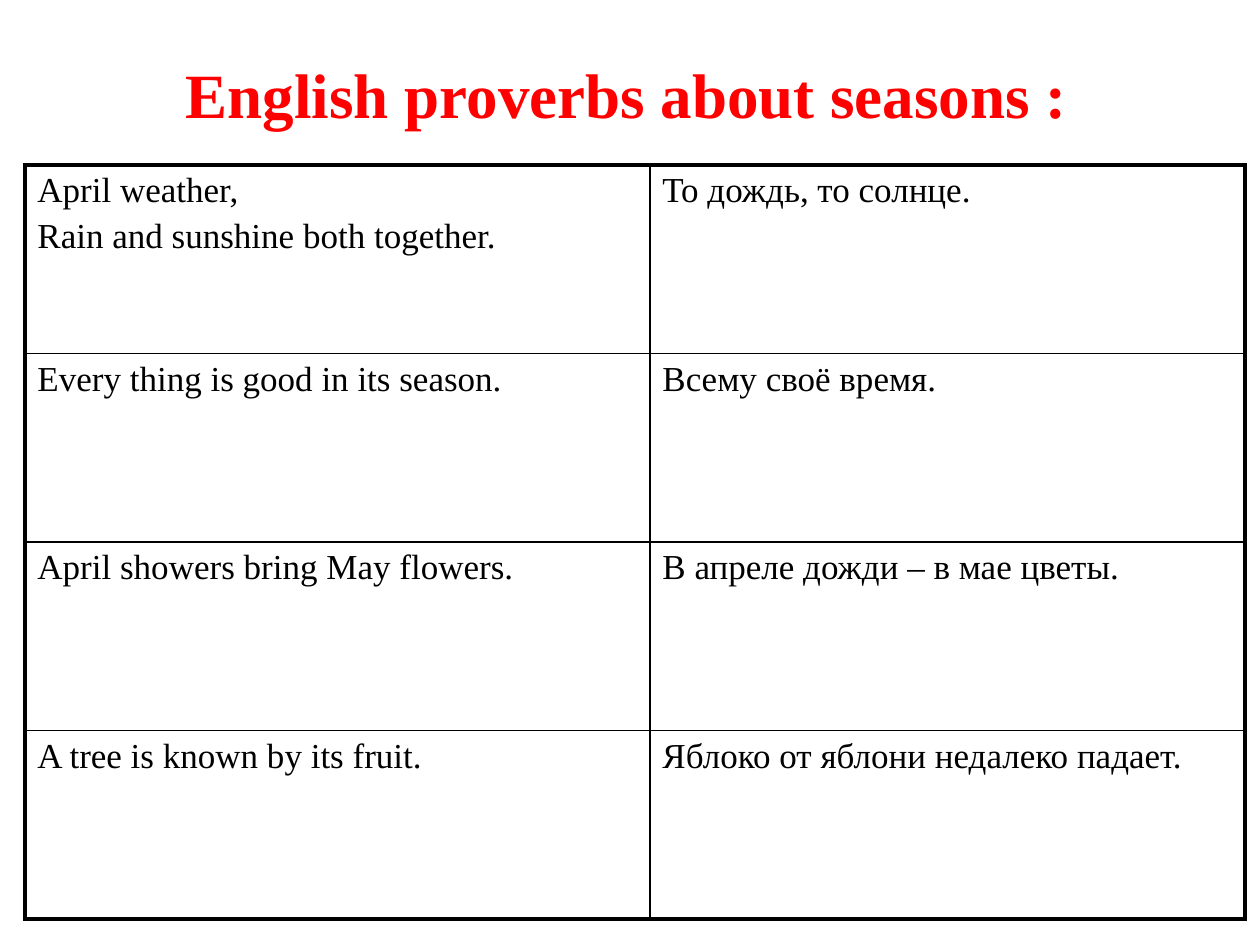
from lxml import etree
from pptx import Presentation
from pptx import util as u
from pptx.dml import color
from pptx.enum import text
from pptx.oxml import ns

THEME = {
    "ink": color.RGBColor(0, 0, 0),
    "accent": color.RGBColor(255, 0, 0),
    "font": "Times New Roman",
    "title": u.Pt(36),
    "body": u.Pt(20),
    "frame": u.Pt(2.25),
    "grid": u.Pt(1),
}
PROVERBS = [
    ("April weather,\nRain and sunshine both together.", "То дождь, то солнце."),
    ("Every thing is good in its season.", "Всему своё время."),
    ("April showers bring May flowers.", "В апреле дожди – в мае цветы."),
    ("A tree is known by its fruit.", "Яблоко от яблони недалеко падает."),
]
COLUMN_WIDTHS = [u.Cm(12.6), u.Cm(12)]
ROW_HEIGHT = u.Cm(3.8)


def write(paragraph, words, size, ink, bold=False):
    run = paragraph.add_run()
    run.text = words
    for name, value in {"name": THEME["font"], "size": size, "bold": bold}.items():
        setattr(run.font, name, value)
    run.font.color.rgb = ink


def rule_edge(cell, side, width):
    edge = etree.SubElement(cell._tc.get_or_add_tcPr(), ns.qn(f"a:ln{side}"), w=str(int(width)))
    fill = etree.SubElement(edge, ns.qn("a:solidFill"))
    etree.SubElement(fill, ns.qn("a:srgbClr"), val=str(THEME["ink"]))


deck = Presentation()
deck.slide_width, deck.slide_height = u.Cm(25.4), u.Cm(19.05)
slide = deck.slides.add_slide(deck.slide_layouts[6])

heading = slide.shapes.add_textbox(u.Cm(1.2), u.Cm(1), u.Cm(22.86), u.Cm(1.75)).text_frame
for name, value in {"word_wrap": True, "vertical_anchor": text.MSO_ANCHOR.MIDDLE}.items():
    setattr(heading, name, value)
heading.paragraphs[0].alignment = text.PP_ALIGN.CENTER
write(heading.paragraphs[0], "English proverbs about seasons :", THEME["title"], THEME["accent"], True)

proverbs = slide.shapes.add_table(
    len(PROVERBS), len(COLUMN_WIDTHS), u.Cm(0.5), u.Cm(3.33),
    sum(COLUMN_WIDTHS), ROW_HEIGHT * len(PROVERBS),
).table
proverbs.first_row = proverbs.horz_banding = False
for column, width in zip(proverbs.columns, COLUMN_WIDTHS):
    column.width = width

last_row, last_column = len(PROVERBS) - 1, len(COLUMN_WIDTHS) - 1
for r, pair in enumerate(PROVERBS):
    proverbs.rows[r].height = ROW_HEIGHT
    for c, saying in enumerate(pair):
        cell = proverbs.cell(r, c)
        outer = {"L": c == 0, "R": c == last_column, "T": r == 0, "B": r == last_row}
        for side, is_outer in outer.items():
            rule_edge(cell, side, THEME["frame" if is_outer else "grid"])
        cell.fill.background()
        for i, line in enumerate(saying.split("\n")):
            frame = cell.text_frame
            paragraph = frame.add_paragraph() if i else frame.paragraphs[0]
            paragraph.space_before = u.Pt(4)
            write(paragraph, line, THEME["body"], THEME["ink"])

deck.save("out.pptx")
